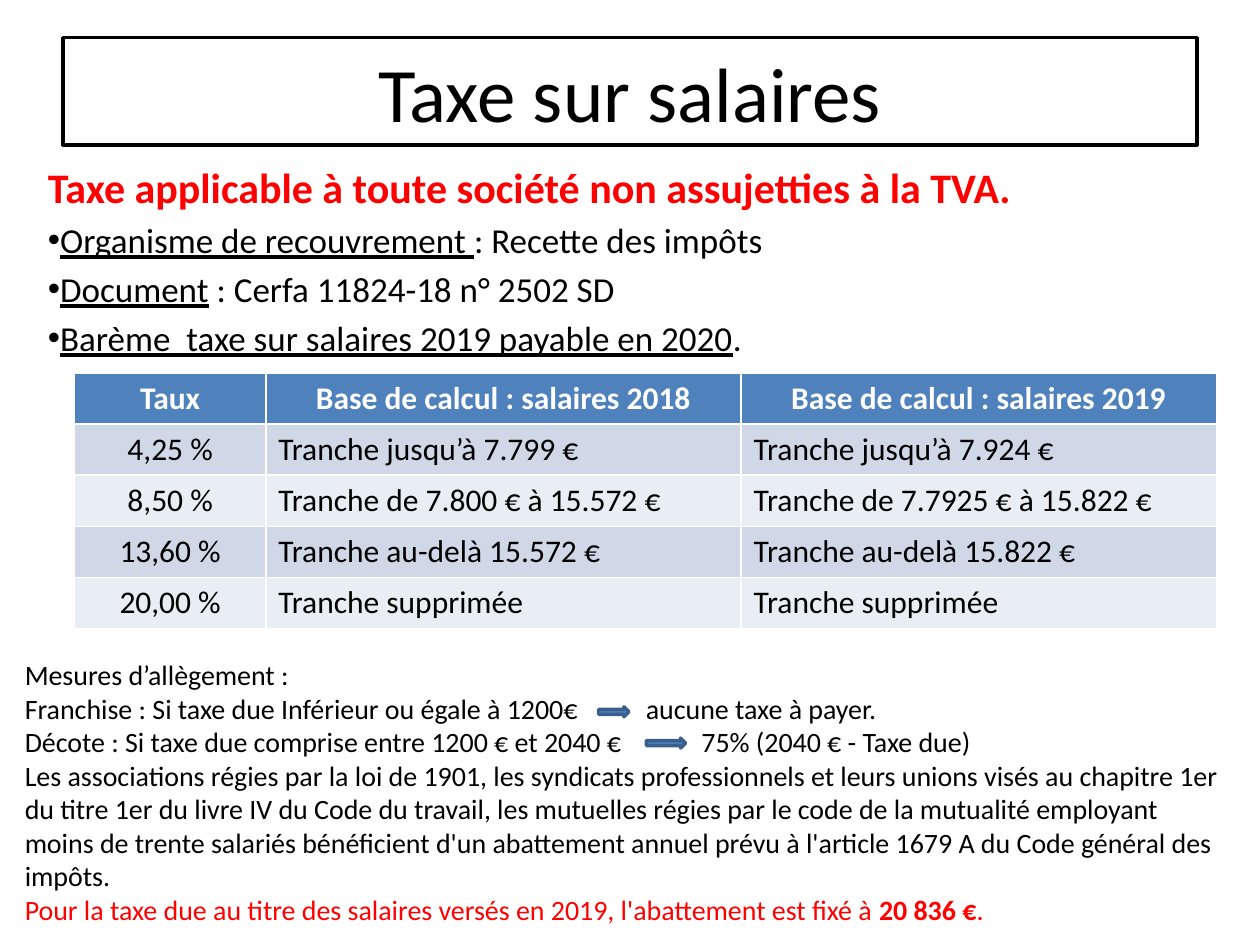
from pptx import Presentation
from pptx.dml.color import RGBColor
from pptx.enum.shapes import MSO_SHAPE
from pptx.enum.text import MSO_ANCHOR, MSO_AUTO_SIZE, PP_ALIGN
from pptx.oxml.ns import qn
from pptx.util import Cm, Pt
from lxml import etree

CENTER, LEFT = PP_ALIGN.CENTER, PP_ALIGN.LEFT
MIDDLE, TOP = MSO_ANCHOR.MIDDLE, MSO_ANCHOR.TOP
NO_AUTOFIT = MSO_AUTO_SIZE.NONE
RIGHT_ARROW = MSO_SHAPE.RIGHT_ARROW
BLACK, WHITE, RED, BLUE = "000000", "FFFFFF", "FF0000", "4F81BD"


def color(hex_code):
    return RGBColor.from_string(hex_code)


def add_text(para, text, size, ink=BLACK, bold=False, underline=False, align=LEFT):
    para.alignment = align
    span = para.add_run()
    span.text = text
    span.font.name = "Calibri"
    span.font.size = Pt(size)
    span.font.bold = bold
    span.font.underline = underline
    span.font.color.rgb = color(ink)


deck = Presentation()
deck.slide_width, deck.slide_height = Cm(25.4), Cm(19.05)
page = deck.slides.add_slide(deck.slide_layouts[1])

# Framed title
title = page.shapes.title
title.left, title.top, title.width, title.height = Cm(1.27), Cm(0.76), Cm(22.86), Cm(2.16)
title.fill.solid()
title.fill.fore_color.rgb = color(WHITE)
title.line.color.rgb = color(BLACK)
title.line.width = Pt(2)
title.text_frame.vertical_anchor = MIDDLE
add_text(title.text_frame.paragraphs[0], "Taxe sur salaires", 44, align=CENTER)

# Key facts: a red heading, then bullets with an underlined label
body = page.placeholders[1]
body.left, body.top, body.width, body.height = Cm(0.71), Cm(3.12), Cm(23.8), Cm(4.19)
body.text_frame.auto_size = NO_AUTOFIT
heading = body.text_frame.paragraphs[0]
add_text(heading, "Taxe applicable à toute société non assujetties à la TVA.", 24, ink=RED, bold=True)
facts = [
    ("Organisme de recouvrement ", ": Recette des impôts"),
    ("Document", " : Cerfa 11824-18 n° 2502 SD"),
    ("Barème  taxe sur salaires 2019 payable en 2020", "."),
]
for label, detail in facts:
    para = body.text_frame.add_paragraph()
    add_text(para, label, 20, underline=True)
    add_text(para, detail, 20)
for number, para in enumerate(body.text_frame.paragraphs):
    props = para._p.get_or_add_pPr()
    props.set("marL", "0")
    props.set("indent", "0")
    if number == 0:
        etree.SubElement(props, qn("a:buNone"))
    else:
        etree.SubElement(props, qn("a:buChar")).set("char", "•")

# Rate table
rows = [
    ("Taux", "Base de calcul : salaires 2018", "Base de calcul : salaires 2019"),
    ("4,25 %", "Tranche jusqu’à 7.799 €", "Tranche jusqu’à 7.924 €"),
    ("8,50 %", "Tranche de 7.800 € à 15.572 €", "Tranche de 7.7925 € à 15.822 €"),
    ("13,60 %", "Tranche au-delà 15.572 €", "Tranche au-delà 15.822 €"),
    ("20,00 %", "Tranche supprimée", "Tranche supprimée"),
]
widths = [3.86, 9.58, 9.58]
row_height = 1.03
table = page.shapes.add_table(len(rows), len(widths), Cm(1.5), Cm(7.52),
                              Cm(sum(widths)), Cm(row_height * len(rows))).table
for column, width in zip(table.columns, widths):
    column.width = Cm(width)
for r, row in enumerate(rows):
    table.rows[r].height = Cm(row_height)
    header = r == 0
    band = BLUE if header else ("E9EDF4", "D0D8E8")[r % 2]
    for c, text in enumerate(row):
        cell = table.cell(r, c)
        cell.fill.solid()
        cell.fill.fore_color.rgb = color(band)
        cell.vertical_anchor = MIDDLE if c == 0 else TOP
        add_text(cell.text_frame.paragraphs[0], text, 18, ink=WHITE if header else BLACK,
                 bold=header, align=CENTER if header or c == 0 else LEFT)

# Relief measures; a tab stop leaves room for each arrow
measures = [
    ("Mesures d’allègement :", None),
    ("Franchise : Si taxe due Inférieur ou égale à 1200€\taucune taxe à payer.", 12.52),
    ("Décote : Si taxe due comprise entre 1200 € et 2040 €\t75% (2040 € - Taxe due)", 13.64),
    ("Les associations régies par la loi de 1901, les syndicats professionnels et leurs unions "
     "visés au chapitre 1er du titre 1er du livre IV du Code du travail, les mutuelles régies par "
     "le code de la mutualité employant moins de trente salariés bénéficient d'un abattement "
     "annuel prévu à l'article 1679 A du Code général des impôts.", None),
]
box = page.shapes.add_textbox(Cm(0.25), Cm(13.13), Cm(24.79), Cm(5.74))
frame = box.text_frame
frame.word_wrap = True
for number, (text, tab_stop) in enumerate(measures):
    para = frame.add_paragraph() if number else frame.paragraphs[0]
    add_text(para, text, 16)
    if tab_stop:
        tabs = etree.SubElement(para._p.get_or_add_pPr(), qn("a:tabLst"))
        tab = etree.SubElement(tabs, qn("a:tab"))
        tab.set("pos", str(Cm(tab_stop)))
        tab.set("algn", "l")
allowance = frame.add_paragraph()
add_text(allowance, "Pour la taxe due au titre des salaires versés en 2019, "
         "l'abattement est fixé à ", 16, ink=RED)
add_text(allowance, "20 836 €", 16, ink=RED, bold=True)
add_text(allowance, ".", 16, ink=RED)

# Arrows from condition to result
for left, top, width in [(12.07, 14.25, 0.61), (13.03, 14.88, 0.79)]:
    arrow = page.shapes.add_shape(RIGHT_ARROW, Cm(left), Cm(top), Cm(width), Cm(0.2))
    arrow.shadow.inherit = False
    arrow.fill.solid()
    arrow.fill.fore_color.rgb = color(BLUE)
    arrow.line.color.rgb = color("3A5F8C")
    arrow.line.width = Pt(2)

deck.save("out.pptx")
